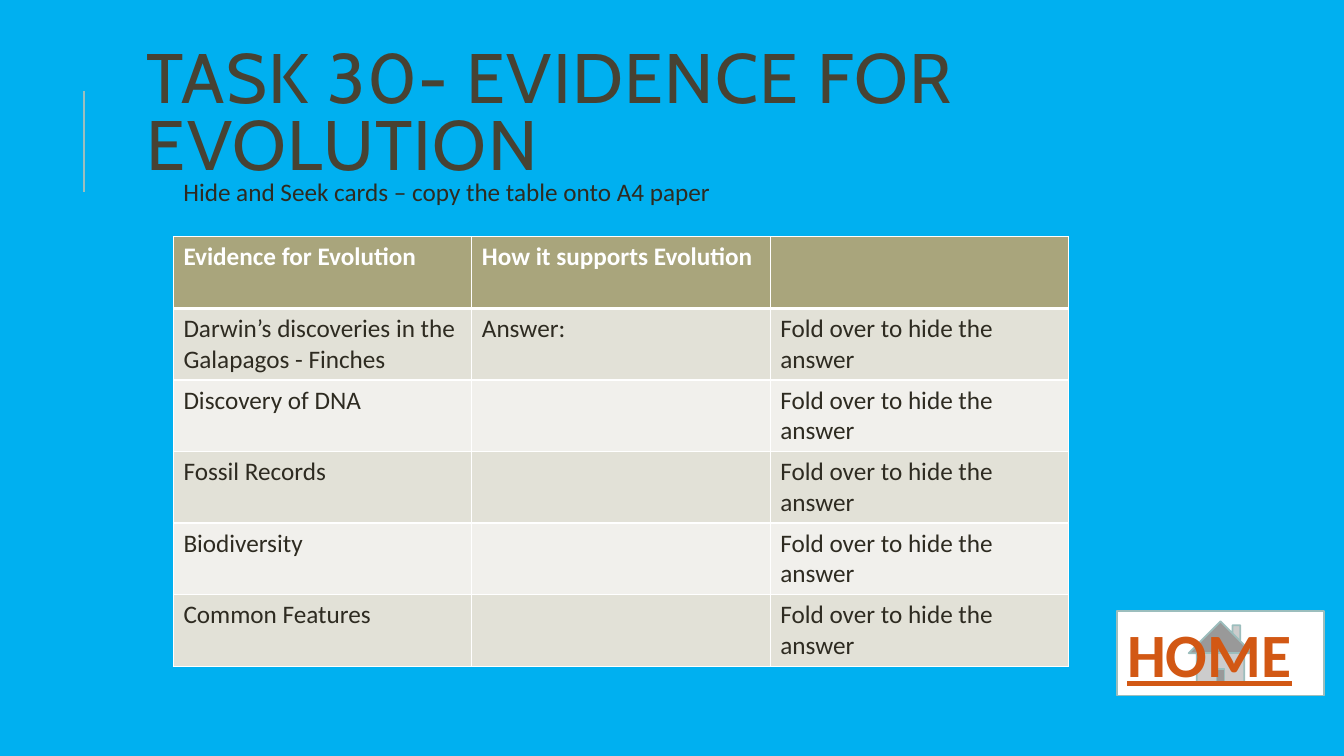
import pptx
import pptx.dml.color
import pptx.enum.shapes
import pptx.enum.text
import pptx.oxml
import pptx.oxml.ns
import pptx.util
from lxml import etree

Inches, Pt = pptx.util.Inches, pptx.util.Pt
SKY, WHITE, SAGE, INK = "00B0F0", "FFFFFF", "9CBEBD", "2E2B21"
HEADER, BANDS = "A9A57C", ("E2E1D7", "F1F0EC")
MARGIN, COLUMN, ROW = 1.72, 2.96, 0.71

FOLD = "Fold over to hide the answer"
CARDS = [
    ("Evidence for Evolution", "How it supports Evolution", ""),
    ("Darwin’s discoveries in the Galapagos - Finches", "Answer:", FOLD),
    ("Discovery of DNA", "", FOLD),
    ("Fossil Records", "", FOLD),
    ("Biodiversity", "", FOLD),
    ("Common Features", "", FOLD),
]


def rgb(value):
    return pptx.dml.color.RGBColor.from_string(value)


def box(left, top, width, height):
    return [Inches(length) for length in (left, top, width, height)]


def write(frame, text, size, color, font="Calibri", bold=False):
    paragraph = frame.paragraphs[0]
    paragraph.alignment = pptx.enum.text.PP_ALIGN.LEFT
    if text:
        paragraph.add_run().text = text
    style = paragraph.font
    style.name, style.size, style.bold = font, Pt(size), bold
    style.color.rgb = rgb(color)
    return paragraph


def line_xml(tag, color, width):
    """Build a solid line element for cell borders and letter outlines."""
    line = etree.Element(pptx.oxml.ns.qn(tag), w=str(Pt(width)))
    fill = etree.SubElement(line, pptx.oxml.ns.qn("a:solidFill"))
    etree.SubElement(fill, pptx.oxml.ns.qn("a:srgbClr"), val=color)
    return pptx.oxml.parse_xml(etree.tostring(line))


def add_text(slide, place, text, size, color, font="Calibri", wrap=True):
    frame = slide.shapes.add_textbox(*box(*place)).text_frame
    frame.word_wrap = wrap
    return frame, write(frame, text, size, color, font)


def add_title(slide):
    frame, title = add_text(slide, (1.36, 0.34, 10.63, 1.64),
                            "TASK 30- EVIDENCE FOR EVOLUTION", 50, "474233", "Cabin")
    frame.vertical_anchor = pptx.enum.text.MSO_ANCHOR.MIDDLE
    title.line_spacing = 0.8
    title.runs[0].font._element.set("spc", "100")


def add_accent(slide):
    accent = slide.shapes.add_connector(
        pptx.enum.shapes.MSO_CONNECTOR.STRAIGHT,
        Inches(0.83), Inches(1.9), Inches(0.83), Inches(0.9))
    accent.line.color.rgb = rgb(SAGE)
    accent.line.width = Pt(1.5)
    etree.SubElement(accent._element.spPr, pptx.oxml.ns.qn("a:effectLst"))


def add_home_button(slide):
    button = slide.shapes.add_shape(
        pptx.enum.shapes.MSO_SHAPE.ACTION_BUTTON_HOME, *box(11.08, 6.06, 2.05, 0.84))
    button.shadow.inherit = False
    button.fill.solid()
    button.fill.fore_color.rgb = rgb(WHITE)
    button.line.color.rgb = rgb(SAGE)
    button.line.width = Pt(1.25)
    frame = button.text_frame
    frame.word_wrap = True
    frame.vertical_anchor = pptx.enum.text.MSO_ANCHOR.TOP
    label = write(frame, "HOME", 44, "D25814", bold=True)
    label.font.underline = True
    label.runs[0].font._element.insert(0, line_xml("a:ln", SAGE, 1.75))


def fill_cell(cell, text, row):
    is_header = row == 0
    write(cell.text_frame, text, 18, WHITE if is_header else INK, bold=is_header)
    # Thick rule between the header and the first card
    widths = {"L": 1, "R": 1, "T": 3 if row == 1 else 1, "B": 3 if is_header else 1}
    borders = cell._tc.get_or_add_tcPr()
    for side, width in widths.items():
        borders.append(line_xml(f"a:ln{side}", WHITE, width))
    cell.fill.solid()
    cell.fill.fore_color.rgb = rgb(HEADER if is_header else BANDS[(row - 1) % 2])


def add_cards(slide):
    rows, columns = len(CARDS), len(CARDS[0])
    cards = slide.shapes.add_table(
        rows, columns, *box(MARGIN, 2.35, columns * COLUMN, rows * ROW)).table
    for row, texts in enumerate(CARDS):
        for column, text in enumerate(texts):
            fill_cell(cards.cell(row, column), text, row)


def main():
    deck = pptx.Presentation()
    deck.slide_width, deck.slide_height = Inches(13.33), Inches(7.5)
    slide = deck.slides.add_slide(deck.slide_layouts[6])
    slide.background.fill.solid()
    slide.background.fill.fore_color.rgb = rgb(SKY)

    # Frame of the slide
    add_accent(slide)
    add_home_button(slide)

    # Heading, cards and instruction
    add_title(slide)
    add_cards(slide)
    add_text(slide, (MARGIN, 1.7, 5.58, 0.4),
             "Hide and Seek cards – copy the table onto A4 paper", 18, INK, wrap=False)

    deck.save("out.pptx")


if __name__ == "__main__":
    main()
